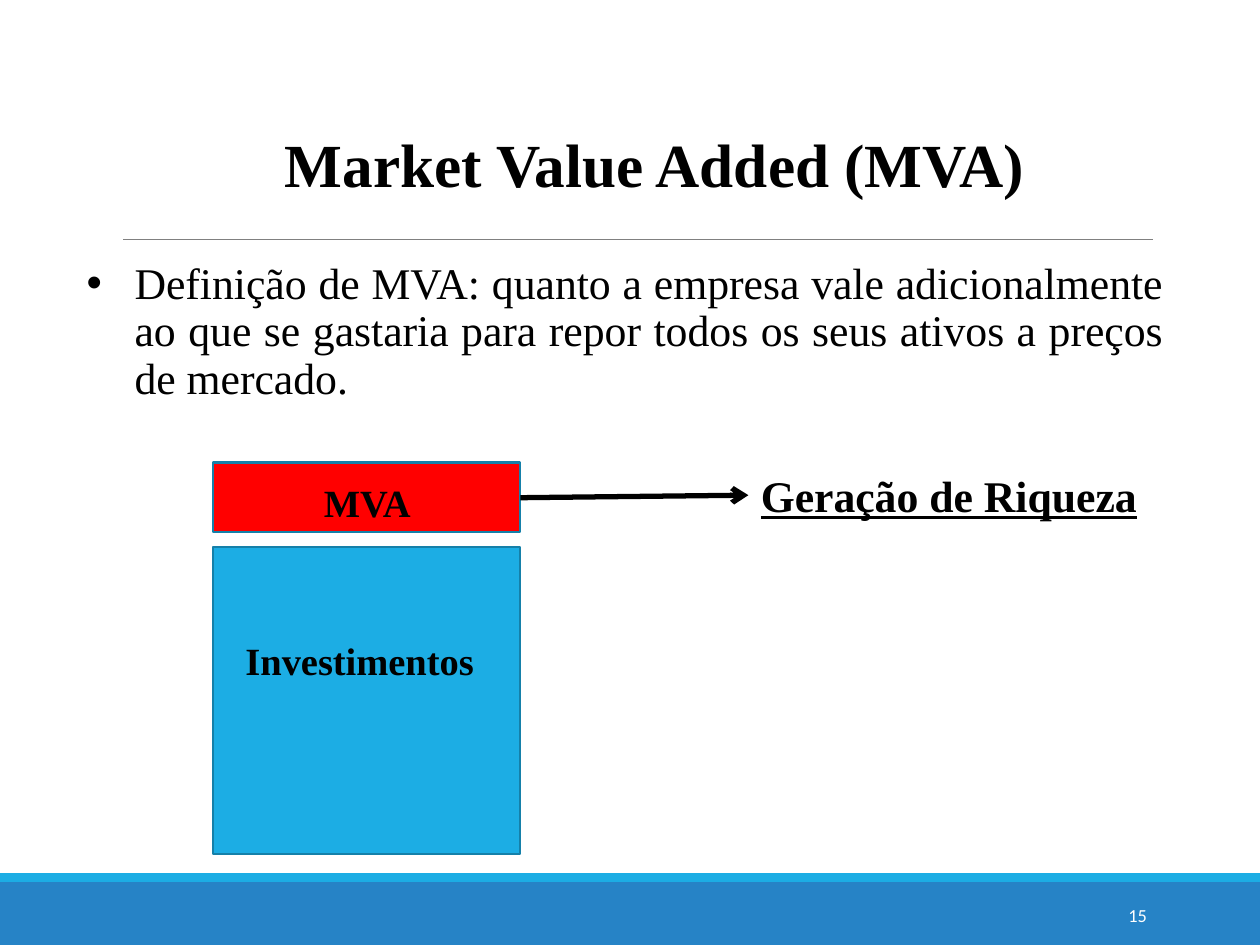
from pptx import Presentation
from pptx.dml.color import RGBColor
from pptx.enum.shapes import MSO_CONNECTOR, MSO_SHAPE
from pptx.enum.text import MSO_ANCHOR, PP_ALIGN
from pptx.oxml.ns import qn
from pptx.util import Inches, Pt
from lxml import etree

RECTANGLE = MSO_SHAPE.RECTANGLE
STRAIGHT = MSO_CONNECTOR.STRAIGHT
TOP, MIDDLE = MSO_ANCHOR.TOP, MSO_ANCHOR.MIDDLE
LEFT, CENTER = PP_ALIGN.LEFT, PP_ALIGN.CENTER
RIGHT, JUSTIFY = PP_ALIGN.RIGHT, PP_ALIGN.JUSTIFY

THEME = {
    "serif": "Times New Roman", "sans": "Calibri",
    "black": "000000", "white": "FFFFFF", "gray": "808080",
    "footer": "2683C6", "cyan": "1CADE4", "red": "FF0000", "border": "1580A9",
    "title": 35, "body": 25, "label": 22, "number": 10.5,
}

presentation = Presentation()
presentation.slide_width, presentation.slide_height = Inches(10), Inches(7.5)
slide = presentation.slides.add_slide(presentation.slide_layouts[6])

# Grid of 100 columns by 75 rows
CELL = presentation.slide_width / 100


def grid(*cells):
    return [round(cell * CELL) for cell in cells]


def add_text(text, place, size, font="serif", color="black", bold=False,
             underline=False, align=LEFT, anchor=TOP, spacing=1.0):
    box = slide.shapes.add_textbox(*grid(*place))
    frame = box.text_frame
    frame.word_wrap = True
    frame.vertical_anchor = anchor
    paragraph = frame.paragraphs[0]
    paragraph.alignment = align
    paragraph.line_spacing = spacing
    run = paragraph.add_run()
    run.text = text
    run.font.name = THEME[font]
    run.font.size = Pt(THEME[size])
    run.font.bold = bold
    run.font.underline = underline
    run.font.color.rgb = RGBColor.from_string(THEME[color])
    return box


# Footer bands, then the two stacked value blocks
BLOCK_LEFT, BLOCK_WIDTH = 16.9, 24.4
for place, fill, border in (
    ((0, 70, 100, 5), "footer", None),
    ((0, 69.3, 100, 0.7), "cyan", None),
    ((BLOCK_LEFT, 43.4, BLOCK_WIDTH, 24.4), "cyan", "border"),
    ((BLOCK_LEFT, 36.7, BLOCK_WIDTH, 5.5), "red", "border"),
):
    shape = slide.shapes.add_shape(RECTANGLE, *grid(*place))
    shape.shadow.inherit = False
    shape.fill.solid()
    shape.fill.fore_color.rgb = RGBColor.from_string(THEME[fill])
    if border:
        shape.line.color.rgb = RGBColor.from_string(THEME[border])
        shape.line.width = Pt(1.25)
    else:
        shape.line.fill.background()

# Title rule and arrow from the MVA block to its meaning
for ends, color, width, arrow in (
    ((9.8, 19, 91.5, 19), "gray", 0.5, False),
    ((BLOCK_LEFT + BLOCK_WIDTH, 39.5, 59.4, 39.3), "black", 3, True),
):
    connector = slide.shapes.add_connector(STRAIGHT, *grid(*ends))
    connector.line.color.rgb = RGBColor.from_string(THEME[color])
    connector.line.width = Pt(width)
    if arrow:
        etree.SubElement(connector.line._get_or_add_ln(), qn("a:tailEnd"), type="arrow")
    etree.SubElement(connector._element.spPr, qn("a:effectLst"))

# Title, set slightly right of and below the box's default position
title = add_text("Market Value Added (MVA)", (9.1, 5.6, 83.5, 9.9), "title",
                 bold=True, align=CENTER, spacing=1.5)
title.text_frame.margin_left, title.text_frame.margin_top = grid(3.2, 1.5)

# Definition with a hanging bullet
definition = add_text(
    "Definição de MVA: quanto a empresa vale adicionalmente ao que se gastaria "
    "para repor todos os seus ativos a preços de mercado.",
    (5.9, 20.3, 87.4, 46.9), "body", align=JUSTIFY, spacing=0.9)
properties = definition.text_frame.paragraphs[0]._p.get_or_add_pPr()
indent, = grid(3.8)
properties.set("marL", str(indent))
properties.set("indent", str(-indent))
etree.SubElement(properties, qn("a:buFont"), typeface="Arial")
etree.SubElement(properties, qn("a:buChar"), char="•")

# Diagram labels and slide number
add_text("Investimentos", (18.5, 50.1, 21.3, 4.7), "label", bold=True)
add_text("MVA", (18.5, 37.5, 21.3, 4.7), "label", bold=True, align=CENTER)
add_text("Geração de Riqueza", (59.4, 36.7, 32.3, 5.2), "body",
         bold=True, underline=True)
add_text("15", (81.2, 70.6, 10.8, 4), "number", font="sans", color="white",
         align=RIGHT, anchor=MIDDLE)

presentation.save("out.pptx")
